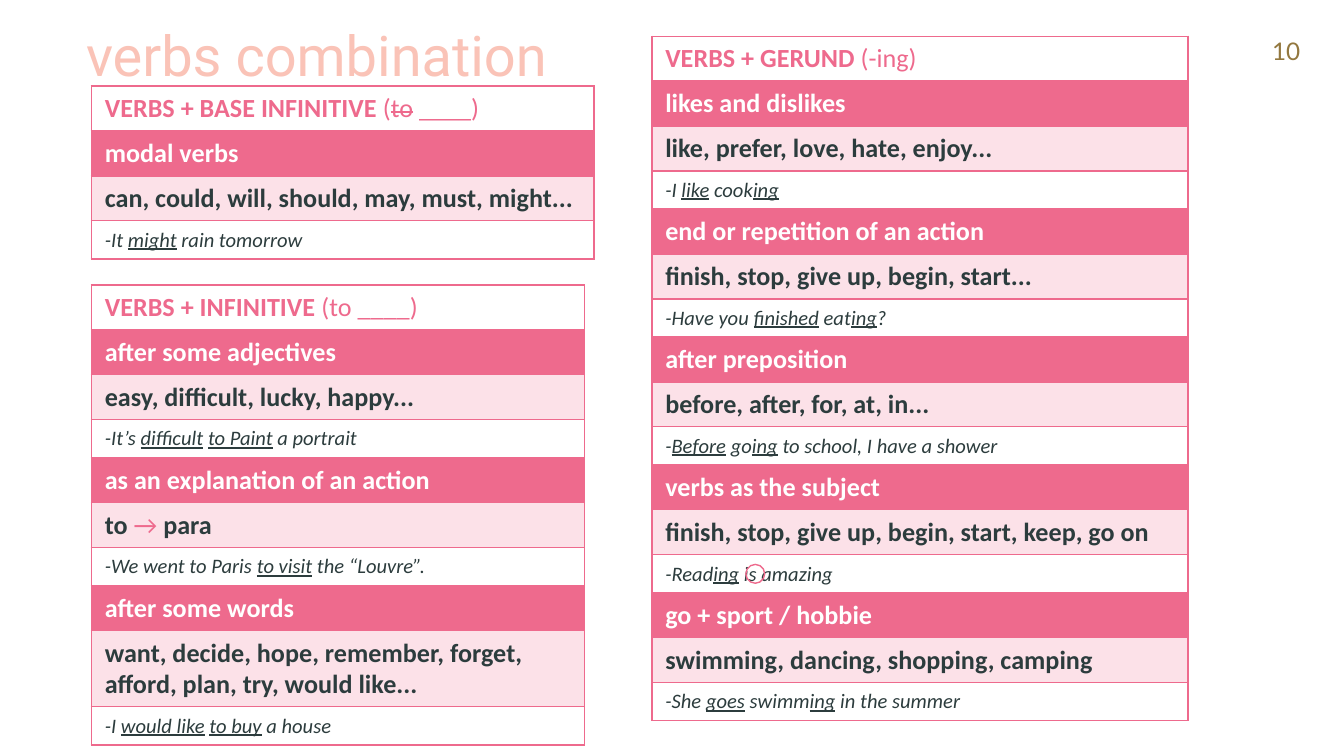
from pptx import Presentation
from pptx.dml.color import RGBColor as Rgb
from pptx.enum.shapes import MSO_SHAPE as Shape
from pptx.enum.text import MSO_ANCHOR as Anchor, PP_ALIGN as Align
from pptx.oxml.ns import qn
from pptx.util import Inches, Pt
from lxml.etree import SubElement as Sub
from itertools import cycle

THEME = {
    "pink": "EE6A8D", "pale": "FCE1E8", "white": "FFFFFF", "dark": "2C3C3D",
    "peach": "FAC3B7", "gold": "93783F",
    "big": 14, "small": 11, "title": 30, "page": 13,
    "body": "Calibri", "head": "Roboto", "num": "Lato",
}
TABLES = [
    ((0.68, 2.12, 3.67, 3.42), "VERBS + INFINITIVE| (to ____)", [
        ("after some adjectives",
         "easy, difficult, lucky, happy...",
         "-It’s |difficult| |to Paint| a portrait"),
        ("as an explanation of an action",
         "to |→ |para",
         "-We went to Paris |to visit| the “Louvre”."),
        ("after some words",
         "want, decide, hope, remember, forget, afford, plan, try, would like...",
         "-I |would like| |to buy| a house"),
    ]),
    ((4.85, 0.27, 3.99, 5.08), "VERBS + GERUND| (-ing)", [
        ("likes and dislikes",
         "like, prefer, love, hate, enjoy...",
         "-I |like| cook|ing"),
        ("end or repetition of an action",
         "finish, stop, give up, begin, start...",
         "-Have you |finished| eat|ing|?"),
        ("after preposition",
         "before, after, for, at, in...",
         "-|Before| go|ing| to school, I have a shower"),
        ("verbs as the subject",
         "finish, stop, give up, begin, start, keep, go on",
         "-Read|ing| is amazing"),
        ("go + sport / hobbie",
         "swimming, dancing, shopping, camping",
         "-She |goes| swimm|ing| in the summer"),
    ]),
    ((0.68, 0.64, 3.74, 1.28), "VERBS + BASE INFINITIVE| (|to| ____)", [
        ("modal verbs",
         "can, could, will, should, may, must, might...",
         "-It |might| rain tomorrow"),
    ]),
]

BOLD, THIN = {"bold": True}, {"bold": False}
NOTE = {"bold": False, "italic": True}
ROLES = {
    "top": (None, "big", [
        {"color": "pink", **BOLD}, {"color": "pink", **THIN},
        {"color": "pink", "strike": True, **THIN}, {"color": "pink", **THIN}]),
    "group": ("pink", "big", [{"color": "white", **BOLD}]),
    "words": ("pale", "big", [
        {"color": "dark", **BOLD}, {"color": "pink", **THIN}]),
    "note": (None, "small", [
        {"color": "dark", **NOTE},
        {"color": "dark", "underline": True, **NOTE}]),
}


def rgb(key):
    return Rgb.from_string(THEME[key])


def write(para, text, size, face, look):
    run = para.add_run()
    run.text = text
    font = run.font
    font.size, font.name = Pt(THEME[size]), THEME[face]
    for key, value in look.items():
        if key == "color":
            font.color.rgb = rgb(value)
        elif key == "strike":
            run._r.get_or_add_rPr().set("strike", "sngStrike")
        else:
            setattr(font, key, value)


def edge(cell):
    props = cell._tc.get_or_add_tcPr()
    for side in ("lnL", "lnR", "lnT", "lnB"):
        line = Sub(props, qn("a:" + side), w=str(Pt(1)))
        fill = Sub(line, qn("a:solidFill"))
        Sub(fill, qn("a:srgbClr"), val=THEME["pink"])


def grid(slide, box, title, groups):
    rows = [("top", title)]
    for group in groups:
        rows += zip(("group", "words", "note"), group)
    frame = slide.shapes.add_table(len(rows), 1, *map(Inches, box))
    table = frame.table
    table.first_row = table.horz_banding = False
    for i, (role, text) in enumerate(rows):
        fill, size, looks = ROLES[role]
        table.rows[i].height = 0
        cell = table.cell(i, 0)
        edge(cell)
        if fill:
            cell.fill.solid()
            cell.fill.fore_color.rgb = rgb(fill)
        else:
            cell.fill.background()
        para = cell.text_frame.paragraphs[0]
        for part, look in zip(text.split("|"), cycle(looks)):
            write(para, part, size, "body", look)
    frame.height = Inches(box[3])


def label(slide, box, text, size, face, color, frame, para):
    body = slide.shapes.add_textbox(*map(Inches, box)).text_frame
    body.word_wrap = True
    for side in ("left", "right", "top", "bottom"):
        setattr(body, "margin_" + side, 0)
    line = body.paragraphs[0]
    for item, format in ((body, frame), (line, para)):
        for key, value in format.items():
            setattr(item, key, value)
    write(line, text, size, face, {"color": color})


def main():
    deck = Presentation()
    deck.slide_width = Inches(10)
    deck.slide_height = deck.slide_width * 9 // 16
    slide = deck.slides.add_slide(deck.slide_layouts[6])
    label(slide, (9.27, 0.08, 0.6, 0.6), "10", "page", "num", "gold",
          {"vertical_anchor": Anchor.MIDDLE}, {"alignment": Align.CENTER})
    for table in TABLES:
        grid(slide, *table)
    label(slide, (0.64, 0.21, 5.35, 0.43), "verbs combination", "title", "head",
          "peach", {"vertical_anchor": Anchor.TOP}, {"line_spacing": 0.9})
    ring = slide.shapes.add_shape(
        Shape.OVAL, *map(Inches, (5.55, 4.2, 0.14, 0.14)))
    ring.shadow.inherit = False
    ring.fill.background()
    ring.line.color.rgb = rgb("pink")
    ring.line.width = Pt(0.75)
    deck.save("out.pptx")


if __name__ == "__main__":
    main()
